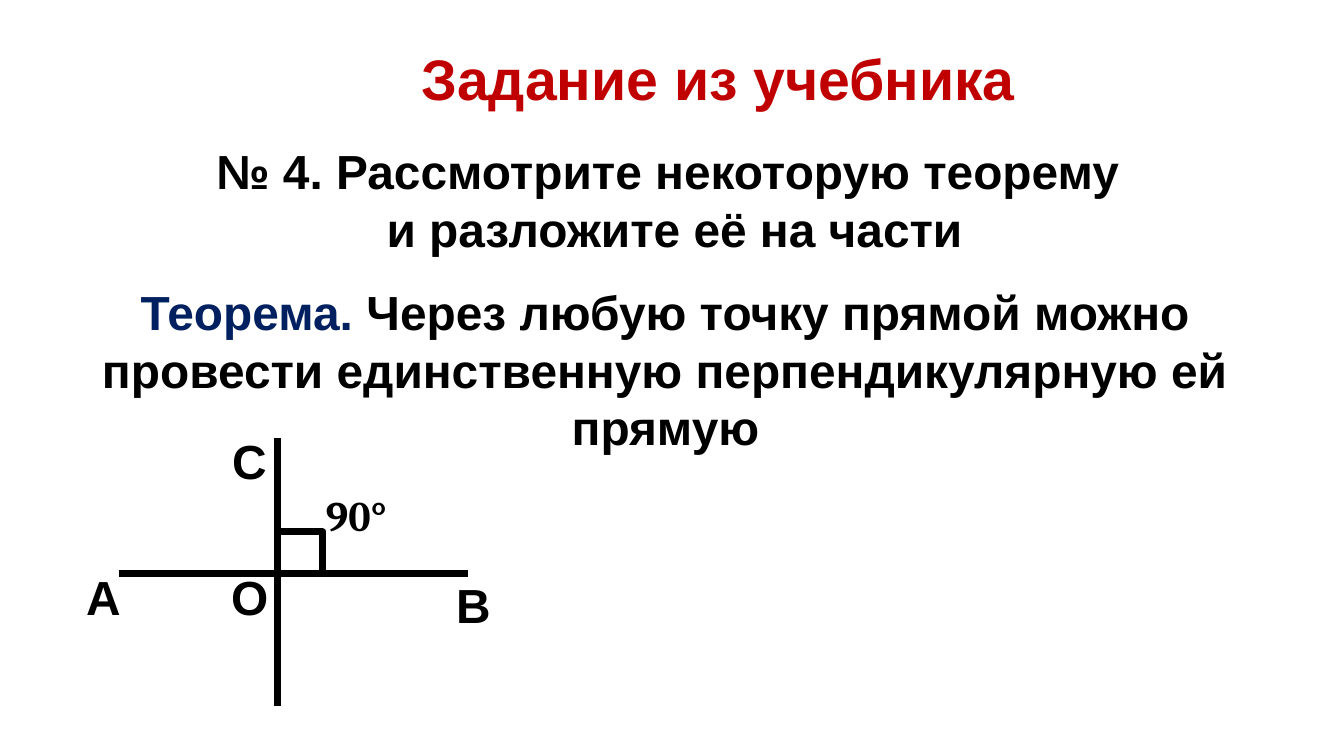
from lxml import etree
from pptx import Presentation
from pptx.dml.color import RGBColor
from pptx.enum.shapes import MSO_CONNECTOR, MSO_SHAPE
from pptx.enum.text import MSO_ANCHOR, MSO_AUTO_SIZE, PP_ALIGN
from pptx.oxml.ns import qn
from pptx.util import Emu, Pt

STRAIGHT = MSO_CONNECTOR.STRAIGHT
RECTANGLE = MSO_SHAPE.RECTANGLE
TOP = MSO_ANCHOR.TOP
GROW = MSO_AUTO_SIZE.SHAPE_TO_FIT_TEXT
LEFT, CENTER = PP_ALIGN.LEFT, PP_ALIGN.CENTER

BLACK = RGBColor(0x00, 0x00, 0x00)
WHITE = RGBColor(0xFF, 0xFF, 0xFF)
RED = RGBColor(0xC0, 0x00, 0x00)
NAVY = RGBColor(0x00, 0x20, 0x60)
BODY_SIZE = 41
LINE_WIDTH = Pt(6)
TITLE_ONLY = 5


def px(length):
    """Turn px into EMU at 84 px to the inch."""
    return Emu(round(length * 914400 / 84))


def add_run(paragraph, text, color=BLACK, size=BODY_SIZE, font_name="Arial"):
    """Append one bold run to a paragraph."""
    run = paragraph.add_run()
    run.text = text
    run.font.name = font_name
    run.font.size = Pt(size)
    run.font.bold = True
    run.font.color.rgb = color


def add_text(slide, box, paragraphs, alignment=LEFT):
    """Add a wrapping text box of paragraphs, each a list of run arguments."""
    frame = slide.shapes.add_textbox(*map(px, box)).text_frame
    frame.word_wrap = True
    frame.auto_size = GROW
    for index, runs in enumerate(paragraphs):
        paragraph = frame.add_paragraph() if index else frame.paragraphs[0]
        paragraph.alignment = alignment
        for run in runs:
            add_run(paragraph, *run)
    return frame


def add_title(slide, box, text):
    """Place and format the title placeholder."""
    title = slide.shapes.title
    title.left, title.top, title.width, title.height = map(px, box)
    frame = title.text_frame
    frame.word_wrap = False
    frame.auto_size = GROW
    frame.vertical_anchor = TOP
    frame.paragraphs[0].alignment = LEFT
    add_run(frame.paragraphs[0], text, RED, 49)


def add_line(slide, start, end):
    """Add a thick black line between two points."""
    connector = slide.shapes.add_connector(STRAIGHT, *map(px, start + end))
    connector.line.color.rgb = BLACK
    connector.line.width = LINE_WIDTH
    etree.SubElement(connector._element.spPr, qn("a:effectLst"))


def add_right_angle(slide, box):
    """Add the square that marks the right angle."""
    square = slide.shapes.add_shape(RECTANGLE, *map(px, box))
    square.shadow.inherit = False
    square.fill.solid()
    square.fill.fore_color.rgb = WHITE
    square.line.color.rgb = BLACK
    square.line.width = LINE_WIDTH


def add_perpendicular_figure(slide, box):
    """Draw the perpendicular lines, the right angle and the point labels."""
    left, top, width, height = box
    center_x, center_y = left + 200, top + 146
    add_line(slide, (center_x, top + 10), (center_x, top + height))
    add_line(slide, (left + 41, center_y), (left + width - 21, center_y))
    add_right_angle(slide, (center_x, center_y - 42, 45, 42))

    angle = add_text(slide, (left + 236, top + 56, 151, 63),
                     [[("90°", BLACK, 36, "Cambria")]])
    angle.margin_left = angle.margin_right = px(12)
    angle.margin_top = angle.margin_bottom = px(6)

    labels = (("C", 146, 0, 41), ("O", 145, 136, 43),
              ("A", 0, 136, 41), ("B", 370, 144, 41))
    for letter, x, y, label_width in labels:
        add_text(slide, (left + x, top + y, label_width, 66), [[(letter,)]])


def build_theorem_slide(presentation):
    """Build the slide with the task, the theorem and its figure."""
    slide = presentation.slides.add_slide(presentation.slide_layouts[TITLE_ONLY])
    add_title(slide, (413, 39, 617, 78), "Задание из учебника")
    add_text(slide, (62, 138, 1226, 124),
             [[("№ 4. Рассмотрите некоторую теорему ",)],
              [("и разложите её на части",)]], CENTER)
    add_text(slide, (42, 279, 1247, 182),
             [[("Теорема.", NAVY),
               (" Через любую точку прямой можно провести единственную "
                "перпендикулярную ей прямую",)]], CENTER)
    add_perpendicular_figure(slide, (78, 428, 411, 278))


def main():
    """Create and save the presentation."""
    presentation = Presentation()
    presentation.slide_width = px(1344)
    presentation.slide_height = px(756)
    build_theorem_slide(presentation)
    presentation.save("out.pptx")


if __name__ == "__main__":
    main()
